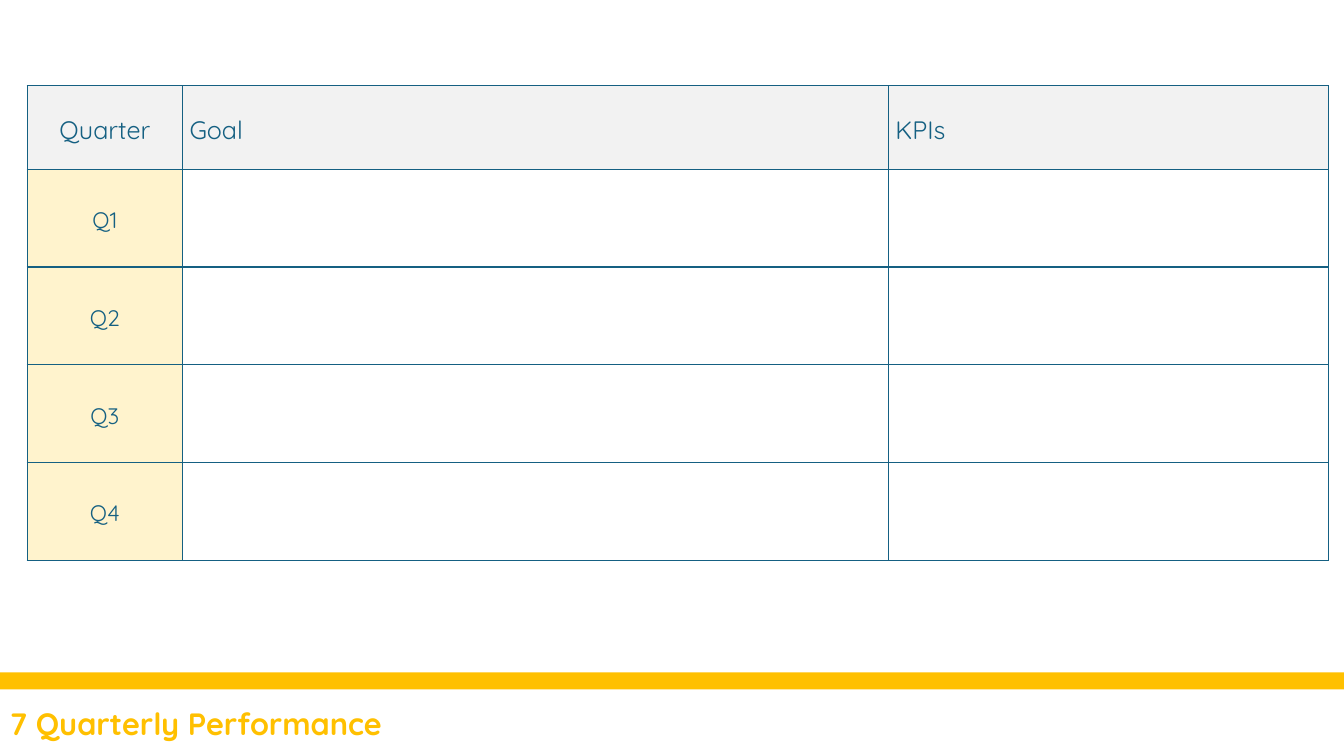
"""Build the quarterly performance slide with its goal and KPI table."""
import dataclasses

import lxml.etree
import pptx
import pptx.dml.color
import pptx.enum.shapes
import pptx.enum.text
import pptx.oxml.ns
import pptx.util

Inches = pptx.util.Inches
Pt = pptx.util.Pt
RGBColor = pptx.dml.color.RGBColor


@dataclasses.dataclass(frozen=True)
class Theme:
    font: str = "Quicksand"
    gold: str = "FFC000"
    blue: str = "156082"
    header_fill: str = "F2F2F2"
    quarter_fill: str = "FFF3CD"
    title_size: int = 22
    header_size: int = 18
    quarter_size: int = 16


theme = Theme()


def style_font(para, size, color):
    para.font.name = theme.font
    para.font.size = Pt(size)
    para.font.color.rgb = RGBColor.from_string(color)


def add_borders(cell):
    properties = cell._tc.get_or_add_tcPr()
    for side in ("a:lnL", "a:lnR", "a:lnT", "a:lnB"):
        line = lxml.etree.SubElement(properties, pptx.oxml.ns.qn(side), w=str(Pt(1)))
        fill = lxml.etree.SubElement(line, pptx.oxml.ns.qn("a:solidFill"))
        lxml.etree.SubElement(fill, pptx.oxml.ns.qn("a:srgbClr"), val=theme.blue)


deck = pptx.Presentation()
deck.slide_width = Inches(13.33)
deck.slide_height = Inches(7.5)
page = deck.slides.add_slide(deck.slide_layouts[6])

band = page.shapes.add_shape(
    pptx.enum.shapes.MSO_SHAPE.RECTANGLE, 0, Inches(6.67), deck.slide_width, Inches(0.17)
)
band.shadow.inherit = False
band.fill.solid()
band.fill.fore_color.rgb = RGBColor.from_string(theme.gold)
band.line.fill.background()

title = page.shapes.add_textbox(0, Inches(6.94), Inches(9.17), Inches(0.47))
title.text_frame.word_wrap = True
title.text_frame.auto_size = pptx.enum.text.MSO_AUTO_SIZE.SHAPE_TO_FIT_TEXT
title_para = title.text_frame.paragraphs[0]
title_para.text = "7 Quarterly Performance"
style_font(title_para, theme.title_size, theme.gold)
title_para.font.bold = True

column_widths = [1.54, 7, 4.37]
row_heights = [0.83] + [0.97] * 4
rows = [["Quarter", "Goal", "KPIs"]] + [[f"Q{number}", "", ""] for number in range(1, 5)]

table = page.shapes.add_table(
    len(rows), len(column_widths), Inches(0.27), Inches(0.85),
    Inches(sum(column_widths)), Inches(sum(row_heights)),
).table
table.first_row = False
table.horz_banding = False
for column, width in zip(table.columns, column_widths):
    column.width = Inches(width)
for row, height in zip(table.rows, row_heights):
    row.height = Inches(height)

for row_index, texts in enumerate(rows):
    is_header = row_index == 0
    for column_index, text in enumerate(texts):
        cell = table.cell(row_index, column_index)
        add_borders(cell)
        if not text:
            cell.fill.background()
            continue
        cell.fill.solid()
        cell.fill.fore_color.rgb = RGBColor.from_string(
            theme.header_fill if is_header else theme.quarter_fill
        )
        cell.vertical_anchor = pptx.enum.text.MSO_ANCHOR.MIDDLE
        cell.margin_left = cell.margin_right = Inches(0.07)
        cell.margin_top = cell.margin_bottom = 0
        para = cell.text_frame.paragraphs[0]
        para.text = text
        para.line_spacing = 1.15
        para.space_after = Pt(8)
        if column_index == 0:
            para.alignment = pptx.enum.text.PP_ALIGN.CENTER
        style_font(para, theme.header_size if is_header else theme.quarter_size, theme.blue)

deck.save("out.pptx")
